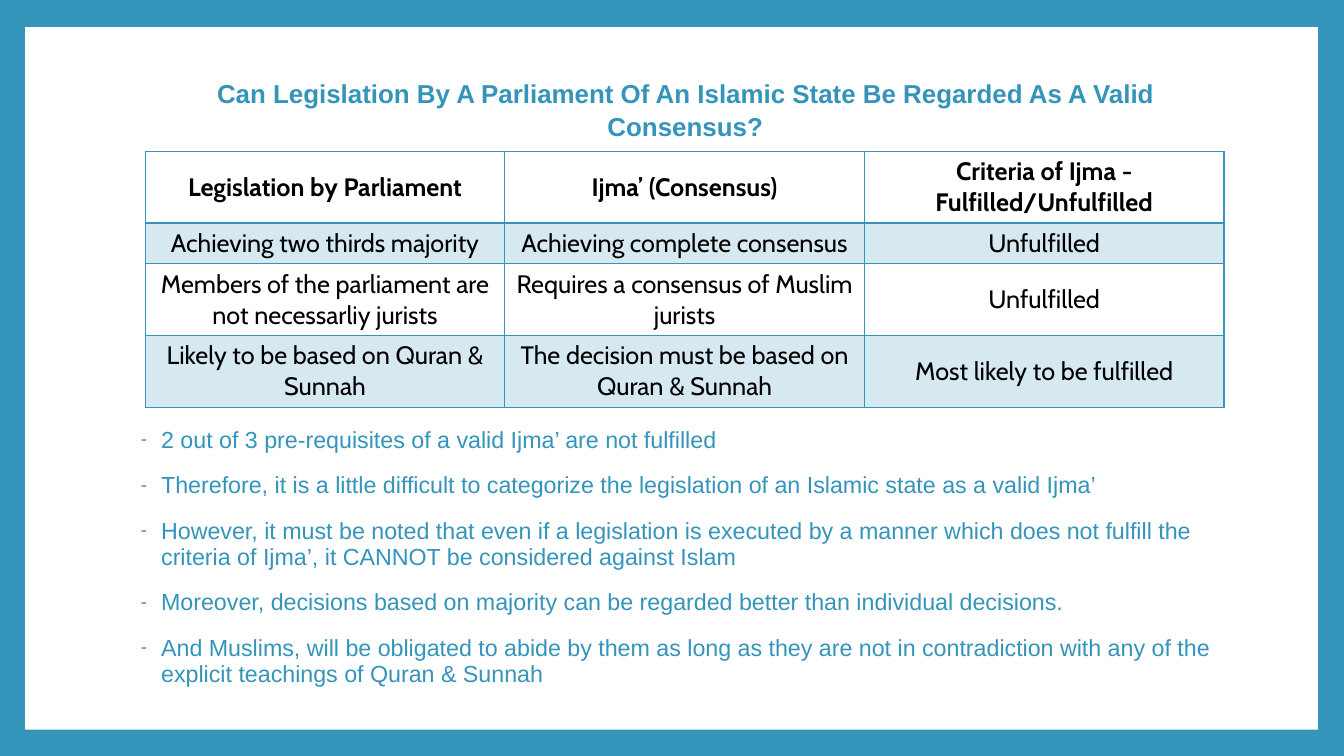
from dataclasses import dataclass

from lxml.etree import SubElement
from pptx import Presentation
from pptx.dml.color import RGBColor
from pptx.enum.shapes import MSO_SHAPE
from pptx.enum.text import MSO_ANCHOR, PP_ALIGN
from pptx.oxml.ns import qn
from pptx.util import Inches, Pt


@dataclass(frozen=True)
class Theme:
    accent: str = "3494BA"
    paper: str = "FFFFFF"
    ink: str = "000000"
    text_font: str = "Arial"
    table_font: str = "Cabin"
    title_size: float = 18.5
    bullet_size: float = 16.6
    table_size: float = 18
    band_alpha: int = 20


T = Theme()
WIDTH, HEIGHT = 13.33, 7.5

TITLE = ("Can Legislation By A Parliament Of An Islamic State "
         "Be Regarded As A Valid Consensus?")
ROWS = [
    ("Legislation by Parliament", "Ijma’ (Consensus)",
     "Criteria of Ijma - Fulfilled/Unfulfilled"),
    ("Achieving two thirds majority", "Achieving complete consensus",
     "Unfulfilled"),
    ("Members of the parliament are not necessarliy jurists",
     "Requires a consensus of Muslim jurists", "Unfulfilled"),
    ("Likely to be based on Quran & Sunnah",
     "The decision must be based on Quran & Sunnah",
     "Most likely to be fulfilled"),
]
ROW_SHARES = (0.28, 0.16, 0.28, 0.28)
BULLETS = [
    "2 out of 3 pre-requisites of a valid Ijma’ are not fulfilled",
    "Therefore, it is a little difficult to categorize the legislation "
    "of an Islamic state as a valid Ijma’",
    "However, it must be noted that even if a legislation is executed by a "
    "manner which does not fulfill the criteria of Ijma’, it CANNOT be "
    "considered against Islam",
    "Moreover, decisions based on majority can be regarded better than "
    "individual decisions.",
    "And Muslims, will be obligated to abide by them as long as they are not "
    "in contradiction with any of the explicit teachings of Quran & Sunnah",
]


def rgb(color):
    return RGBColor.from_string(color)


def write(p, text, size, font=T.text_font, color=T.accent, bold=False,
          align=PP_ALIGN.LEFT, spacing=1.0, before=0):
    p.alignment, p.line_spacing, p.space_before = align, spacing, Pt(before)
    r = p.add_run()
    r.text = text
    r.font.size, r.font.name, r.font.bold = Pt(size), font, bold
    r.font.color.rgb = rgb(color)


def add_text_frame(s, box):
    tf = s.shapes.add_textbox(*map(Inches, box)).text_frame
    tf.word_wrap = True
    return tf


def add_dash(p, indent=0.25, hanging=0.2):
    pPr = p._p.get_or_add_pPr()
    pPr.set("marL", str(Inches(indent)))
    pPr.set("indent", str(-Inches(hanging)))
    color = SubElement(pPr, qn("a:buClr"))
    SubElement(color, qn("a:srgbClr"), val=T.accent)
    SubElement(pPr, qn("a:buSzPct"), val="80000")
    SubElement(pPr, qn("a:buFont"), typeface=T.text_font)
    SubElement(pPr, qn("a:buChar"), char="-")


def style_cell(cell, banded, borders):
    """Set the borders first, then the fill, as the schema orders them."""
    tcPr = cell._tc.get_or_add_tcPr()
    for side, width in borders.items():
        ln = SubElement(tcPr, qn(f"a:ln{side}"), w=str(Pt(width)))
        fill = SubElement(ln, qn("a:solidFill"))
        SubElement(fill, qn("a:srgbClr"), val=T.accent)
    if banded:
        fill = SubElement(tcPr, qn("a:solidFill"))
        color = SubElement(fill, qn("a:srgbClr"), val=T.accent)
        SubElement(color, qn("a:alpha"), val=str(T.band_alpha * 1000))
    else:
        cell.fill.background()


def draw_frame(s, box):
    s.background.fill.solid()
    s.background.fill.fore_color.rgb = rgb(T.accent)
    sp = s.shapes.add_shape(MSO_SHAPE.RECTANGLE, *map(Inches, box))
    sp.shadow.inherit = False
    sp.fill.solid()
    sp.fill.fore_color.rgb = rgb(T.paper)
    sp.line.fill.background()


def draw_title(s, box):
    tf = add_text_frame(s, box)
    write(tf.paragraphs[0], TITLE, T.title_size, bold=True,
          align=PP_ALIGN.CENTER, spacing=1.04)


def draw_table(s, box):
    table = s.shapes.add_table(len(ROWS), len(ROWS[0]),
                               *map(Inches, box)).table
    table.first_row = table.horz_banding = False
    for row, share in zip(table.rows, ROW_SHARES):
        row.height = Inches(box[3] * share)
    for i, texts in enumerate(ROWS):
        borders = {"L": 1, "R": 1, "T": 2 if i == 1 else 1,
                   "B": 2 if i == 0 else 1}
        for j, text in enumerate(texts):
            cell = table.cell(i, j)
            cell.vertical_anchor = MSO_ANCHOR.MIDDLE
            style_cell(cell, i % 2 == 1, borders)
            write(cell.text_frame.paragraphs[0], text, T.table_size,
                  font=T.table_font, color=T.ink, bold=i == 0,
                  align=PP_ALIGN.CENTER)


def draw_bullets(s, box):
    tf = add_text_frame(s, box)
    for i, text in enumerate(BULLETS):
        p = tf.add_paragraph() if i else tf.paragraphs[0]
        write(p, text, T.bullet_size, spacing=0.93, before=14 if i else 0)
        add_dash(p)


def main():
    prs = Presentation()
    prs.slide_width, prs.slide_height = Inches(WIDTH), Inches(HEIGHT)
    s = prs.slides.add_slide(prs.slide_layouts[6])
    left, width = 1.25, 11.09
    draw_frame(s, (0.25, 0.27, 12.82, 6.97))
    draw_title(s, (left, 0.71, width, 0.75))
    draw_table(s, (1.44, 1.5, 10.7, 2.54))
    draw_bullets(s, (left, 4.19, width, 2.95))
    prs.save("out.pptx")


if __name__ == "__main__":
    main()
